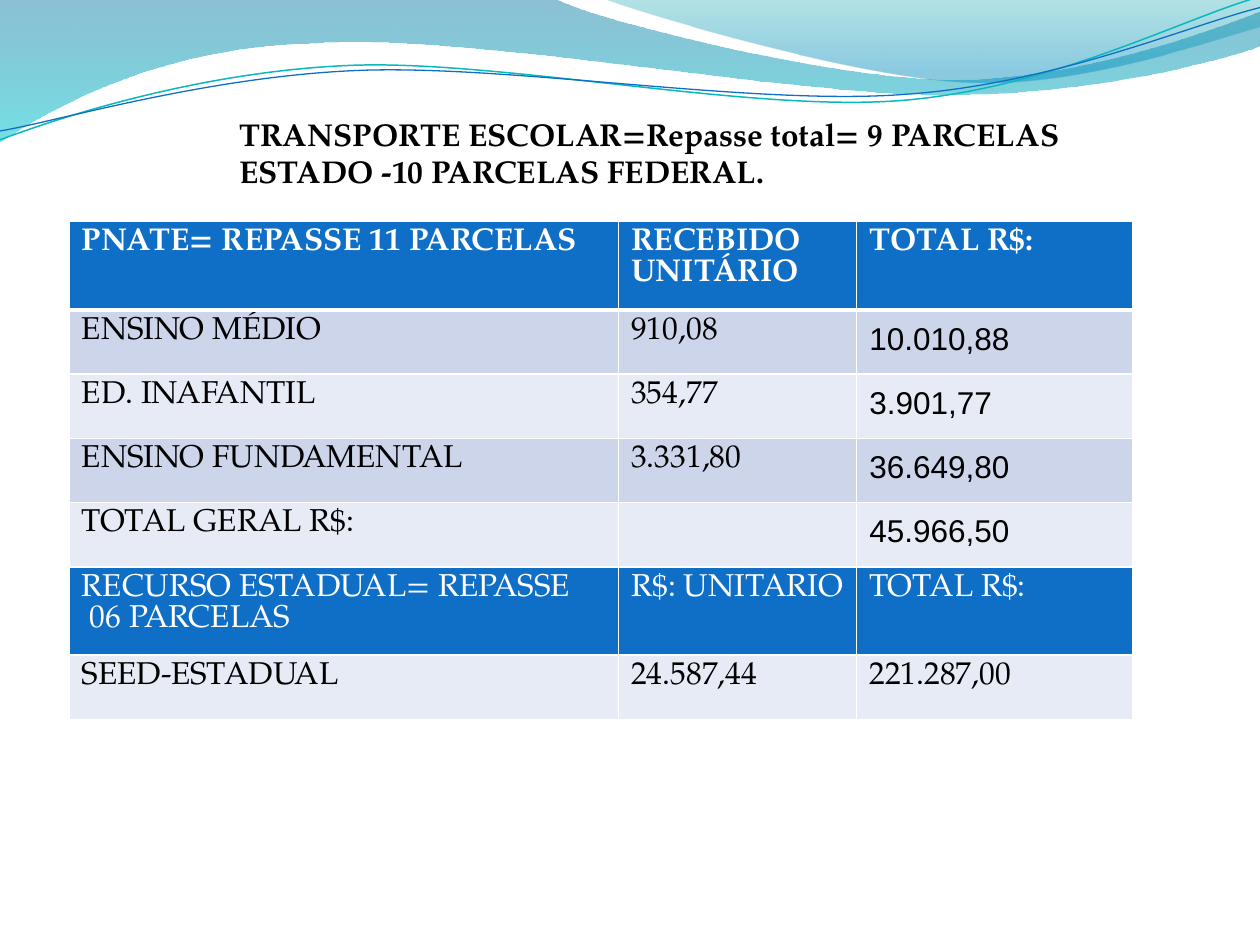
import dataclasses

import lxml.etree
import pptx
import pptx.dml.color
import pptx.oxml.ns
import pptx.util

Inches = pptx.util.Inches
Pt = pptx.util.Pt
qn = pptx.oxml.ns.qn


@dataclasses.dataclass(frozen=True)
class Theme:
    serif: str = "TeX Gyre Pagella"
    sans: str = "Arial"
    size: int = 18
    black: str = "000000"
    white: str = "FFFFFF"
    header: str = "0F6FC6"
    band_dark: str = "CCD5EA"
    band_light: str = "E7EBF5"
    teal_line: str = "0AB8BF"
    blue_line: str = "0F6FC6"
    # Gradient stops: position, colour, opacity (both in percent)
    wide_wave: tuple = ((0, "0074A1", 45), (100, "00C6CF", 55))
    right_wave: tuple = ((0, "00A1A9", 30), (80, "008BBF", 45))


def rgb(value):
    return pptx.dml.color.RGBColor.from_string(value)


def write_text(frame, text, *, font, size, color, bold=False, spacing=None):
    """Fill a text frame, one paragraph for each line of text."""
    for index, line in enumerate(text.split("\n")):
        paragraph = frame.paragraphs[0] if index == 0 else frame.add_paragraph()
        if spacing:
            paragraph.line_spacing = spacing
        run = paragraph.add_run()
        run.text = line
        run.font.name = font
        run.font.size = Pt(size)
        run.font.bold = bold
        run.font.color.rgb = rgb(color)


def bend(shape, segments):
    """Join each three line points of a curved segment into one cubic curve."""
    lines = iter(list(shape._element.iter(qn("a:lnTo"))))
    for segment in segments:
        first = next(lines)
        if len(segment) == 2:
            continue
        first.tag = qn("a:cubicBezTo")
        for _ in range(2):
            line = next(lines)
            first.append(line[0])
            line.getparent().remove(line)


def set_border(cell, side, color, width):
    properties = cell._tc.get_or_add_tcPr()
    border = lxml.etree.Element(qn(f"a:ln{side}"), w=str(Pt(width)))
    fill = lxml.etree.SubElement(border, qn("a:solidFill"))
    lxml.etree.SubElement(fill, qn("a:srgbClr"), val=color)
    properties.insert("LRTB".index(side), border)


class SlideBuilder:
    def __init__(self, slide, theme):
        self.slide = slide
        self.theme = theme

    def outline(self, start, segments, closed):
        """Draw lines (2 numbers) and cubic curves (6 numbers) from a start."""
        builder = self.slide.shapes.build_freeform(*map(Inches, start))
        for segment in segments:
            lengths = [Inches(value) for value in segment]
            builder.add_line_segments(
                list(zip(lengths[::2], lengths[1::2])), close=False)
        if closed:
            builder.add_line_segments([], close=True)
        shape = builder.convert_to_shape()
        bend(shape, segments)
        shape.shadow.inherit = False
        return shape

    def wave(self, start, segments, stops):
        shape = self.outline(start, segments, closed=True)
        shape.line.fill.background()
        shape.fill.gradient()
        shape.fill.gradient_angle = 270
        for stop, (position, color, _) in zip(shape.fill.gradient_stops, stops):
            stop.position = position / 100
            stop.color.rgb = rgb(color)
        colors = shape._element.spPr.iter(qn("a:srgbClr"))
        for element, (_, _, opacity) in zip(colors, stops):
            lxml.etree.SubElement(element, qn("a:alpha"), val=str(opacity * 1000))

    def curve(self, start, segments, color, width):
        shape = self.outline(start, segments, closed=False)
        shape.fill.background()
        shape.line.color.rgb = rgb(color)
        shape.line.width = Pt(width)

    def title(self, text, left, top, width, height):
        box = self.slide.shapes.add_textbox(
            Inches(left), Inches(top), Inches(width), Inches(height))
        box.text_frame.word_wrap = True
        write_text(box.text_frame, text, font=self.theme.serif,
                   size=self.theme.size, color=self.theme.black, bold=True)

    def table(self, rows, left, top, columns, heights, header_rows):
        theme = self.theme
        table = self.slide.shapes.add_table(
            len(rows), len(columns), Inches(left), Inches(top),
            Inches(sum(columns)), Inches(sum(heights))).table
        table.first_row = table.horz_banding = False
        for column, width in zip(table.columns, columns):
            column.width = Inches(width)
        for row, height in zip(table.rows, heights):
            row.height = Inches(height)
        for r, values in enumerate(rows):
            is_header = r in header_rows
            band = theme.band_dark if r % 2 else theme.band_light
            for c, value in enumerate(values):
                cell = table.cell(r, c)
                cell.fill.solid()
                cell.fill.fore_color.rgb = rgb(theme.header if is_header else band)
                for side in "LRTB":
                    thick = (r, side) in ((0, "B"), (1, "T"))
                    set_border(cell, side, theme.white, 3 if thick else 1)
                if not value:
                    continue
                is_total = c == 2 and 1 <= r <= 4
                write_text(cell.text_frame, value,
                           font=theme.sans if is_total else theme.serif,
                           size=theme.size,
                           color=theme.white if is_header else theme.black,
                           bold=r == 0, spacing=1.15 if is_total else None)


ROWS = [
    ("PNATE= REPASSE 11 PARCELAS", "RECEBIDO UNITÁRIO", "TOTAL R$:"),
    ("ENSINO MÉDIO", "910,08", "10.010,88"),
    ("ED. INAFANTIL", "354,77", "3.901,77"),
    ("ENSINO FUNDAMENTAL", "3.331,80", "36.649,80"),
    ("TOTAL GERAL R$:", "", "45.966,50"),
    ("RECURSO ESTADUAL= REPASSE\n 06 PARCELAS", "R$: UNITARIO", "TOTAL R$:"),
    ("SEED-ESTADUAL", "24.587,44", "221.287,00"),
]
HEADER_ROWS = (0, 5)


def main():
    presentation = pptx.Presentation()
    presentation.slide_width = Inches(10)
    presentation.slide_height = Inches(7.5)
    theme = Theme()
    slide = presentation.slides.add_slide(presentation.slide_layouts[6])
    builder = SlideBuilder(slide, theme)

    builder.wave((0, 0), [
        (4.4, -0.01),
        (4.76, 0.17, 6.64, 0.63, 7.58, 0.63),
        (8.53, 0.63, 9.58, 0.26, 10, 0.09),
        (10.01, 0.36),
        (9.83, 0.44, 8.7, 0.76, 7.46, 0.75),
        (6.22, 0.75, 3.82, 0.28, 2.57, 0.34),
        (1.29, 0.36, 0.46, 0.83, -0.01, 1.13),
        (0, 0),
    ], theme.wide_wave)
    builder.wave((4.79, -0.01), [
        (5.09, 0.11, 6.82, 0.62, 7.69, 0.65),
        (8.56, 0.69, 9.61, 0.32, 10, 0.21),
        (10, 0),
        (4.79, -0.01),
    ], theme.right_wave)
    builder.curve((0, 1.11), [
        (0.48, 0.93, 1.58, 0.57, 2.77, 0.52),
        (3.95, 0.47, 5.93, 0.89, 7.13, 0.8),
        (8.33, 0.71, 9.38, 0.15, 9.98, -0.02),
    ], theme.teal_line, 0.85)
    builder.curve((0, 1.04), [
        (0.47, 0.96, 1.64, 0.61, 2.83, 0.56),
        (4.03, 0.51, 5.97, 0.84, 7.17, 0.75),
        (8.36, 0.67, 9.41, 0.21, 10, 0.06),
    ], theme.blue_line, 0.75)

    heights = [0.7 if r in HEADER_ROWS else 0.51 for r in range(len(ROWS))]
    builder.table(ROWS, 0.55, 1.76, (4.36, 1.89, 2.19), heights, HEADER_ROWS)
    builder.title("TRANSPORTE ESCOLAR=Repasse total= 9 PARCELAS "
                  "ESTADO -10 PARCELAS FEDERAL.", 1.8, 0.86, 7.27, 1.01)
    presentation.save("out.pptx")


if __name__ == "__main__":
    main()
